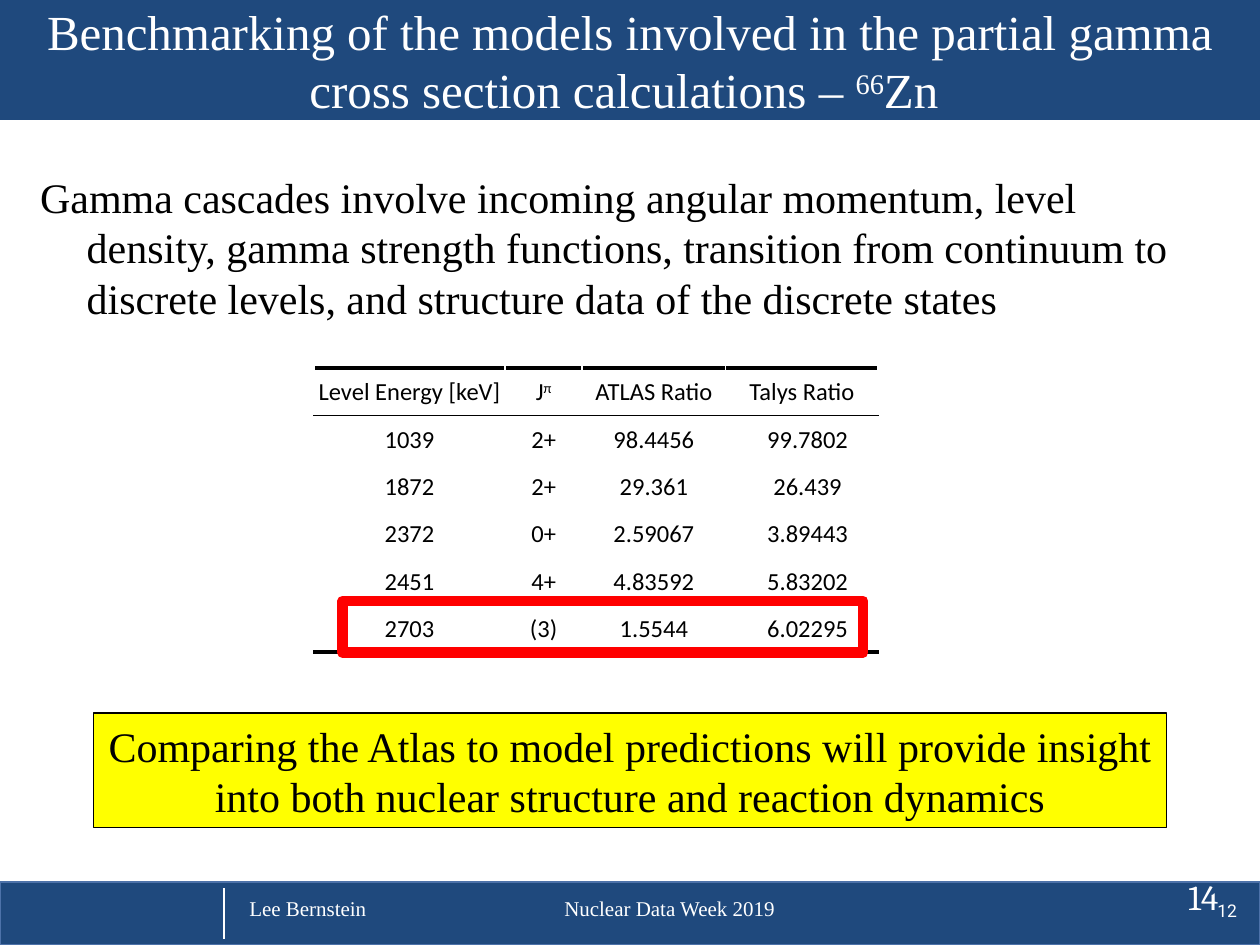
from typing import NamedTuple, Optional

from lxml import etree
from pptx import Presentation
from pptx.dml.color import RGBColor
from pptx.enum.shapes import MSO_CONNECTOR, MSO_SHAPE
from pptx.enum.text import MSO_ANCHOR, PP_ALIGN
from pptx.oxml.ns import qn
from pptx.util import Inches, Pt

RECT = MSO_SHAPE.RECTANGLE
STRAIGHT = MSO_CONNECTOR.STRAIGHT
LEFT, CENTER = PP_ALIGN.LEFT, PP_ALIGN.CENTER
TOP, MIDDLE = MSO_ANCHOR.TOP, MSO_ANCHOR.MIDDLE

WHITE = RGBColor(0xFF, 0xFF, 0xFF)
BLACK = RGBColor(0, 0, 0)
NAVY = RGBColor(0x1F, 0x49, 0x7D)
STEEL = RGBColor(0x4D, 0x72, 0xA9)
YELLOW = RGBColor(0xFF, 0xFF, 0)
RED = RGBColor(0xFF, 0, 0)
SERIF = "Times New Roman"


class Box(NamedTuple):
    left: float
    top: float
    width: float
    height: float


class Style(NamedTuple):
    font: str
    size: float
    color: RGBColor
    align: PP_ALIGN = CENTER


class Run(NamedTuple):
    text: str
    raised: bool = False


class Border(NamedTuple):
    color: RGBColor
    width: float


THIN_WHITE = Border(WHITE, 1)
THIN_BLACK = Border(BLACK, 1)
THICK_BLACK = Border(BLACK, 2.25)

COLUMN_WIDTHS = (1.52, 0.61, 1.14, 1.21)
ROW_HEIGHT = 0.376
HEADER = ([Run("Level Energy [keV]")], [Run("J"), Run("π", True)],
          [Run("ATLAS Ratio")], [Run("Talys Ratio")])
LEVELS = (
    ("1039", "2+", "98.4456", "99.7802"),
    ("1872", "2+", "29.361", "26.439"),
    ("2372", "0+", "2.59067", "3.89443"),
    ("2451", "4+", "4.83592", "5.83202"),
    ("2703", "(3)", "1.5544", "6.02295"),
)


def write(tf, runs: list[Run], style: Style):
    p = tf.paragraphs[0]
    p.alignment = style.align
    for run in runs:
        r = p.add_run()
        r.text = run.text
        r.font.name = style.font
        r.font.size = Pt(style.size)
        r.font.color.rgb = style.color
        if run.raised:
            r.font._element.set("baseline", "30000")
    return p


def add_text(slide, box: Box, runs: list[Run], style: Style):
    tf = slide.shapes.add_textbox(*map(Inches, box)).text_frame
    tf.word_wrap = True
    tf.vertical_anchor = TOP
    return write(tf, runs, style)


def add_rect(slide, box: Box, fill: Optional[RGBColor], line: Border):
    sp = slide.shapes.add_shape(RECT, *map(Inches, box))
    sp.shadow.inherit = False
    if fill is None:
        sp.fill.background()
    else:
        sp.fill.solid()
        sp.fill.fore_color.rgb = fill
    sp.line.color.rgb = line.color
    sp.line.width = Pt(line.width)
    sp.text_frame.word_wrap = True
    sp.text_frame.vertical_anchor = MIDDLE
    return sp


def set_borders(cell, left: Border, right: Border, top: Border, bottom: Border) -> None:
    tc_pr = cell._tc.get_or_add_tcPr()
    sides = zip(("a:lnL", "a:lnR", "a:lnT", "a:lnB"), (left, right, top, bottom))
    for i, (tag, border) in enumerate(sides):
        ln = etree.Element(qn(tag), w=str(Pt(border.width)))
        fill = etree.SubElement(ln, qn("a:solidFill"))
        etree.SubElement(fill, qn("a:srgbClr"), val=str(border.color))
        tc_pr.insert(i, ln)


def add_level_table(slide, left: float, top: float) -> None:
    rows = [HEADER] + [[[Run(value)] for value in level] for level in LEVELS]
    last = len(rows) - 1
    style = Style("Calibri", 14, BLACK)
    table = slide.shapes.add_table(
        len(rows), len(COLUMN_WIDTHS), Inches(left), Inches(top),
        Inches(sum(COLUMN_WIDTHS)), Inches(ROW_HEIGHT * len(rows))).table
    table.first_row = table.horz_banding = False
    for column, width in zip(table.columns, COLUMN_WIDTHS):
        column.width = Inches(width)
    for i, row in enumerate(rows):
        table.rows[i].height = Inches(ROW_HEIGHT)
        above = {0: THICK_BLACK, 1: THIN_BLACK}.get(i, THIN_WHITE)
        below = {0: THIN_BLACK, last: THICK_BLACK}.get(i, THIN_WHITE)
        for j, runs in enumerate(row):
            cell = table.cell(i, j)
            cell.fill.background()
            cell.vertical_anchor = MIDDLE
            indented = i > 0 and j == len(row) - 1
            cell.margin_left = Inches(0.1 if indented else 0.01)
            cell.margin_right = cell.margin_top = Inches(0.01)
            cell.margin_bottom = 0
            write(cell.text_frame, runs, style)
            set_borders(cell, THIN_WHITE, THIN_WHITE, above, below)


def add_footer(slide) -> None:
    add_rect(slide, Box(0, 7, 10, 0.5), NAVY, Border(STEEL, 0.75))
    add_text(slide, Box(9.54, 7.09, 0.4, 0.27), [Run("12")], Style("Roboto", 10, WHITE))
    divider = slide.shapes.add_connector(
        STRAIGHT, Inches(1.78), Inches(7.05), Inches(1.78), Inches(7.45))
    divider.line.color.rgb = WHITE
    divider.line.width = Pt(1)
    etree.SubElement(divider._element.spPr, qn("a:effectLst"))
    p = add_text(slide, Box(1.88, 7.06, 4.42, 0.3),
                 [Run("Lee Bernstein\tNuclear Data Week 2019")],
                 Style(SERIF, 12, WHITE, LEFT))
    tabs = etree.SubElement(p._p.get_or_add_pPr(), qn("a:tabLst"))
    etree.SubElement(tabs, qn("a:tab"), pos=str(Inches(2.5)), algn="l")


def main() -> None:
    prs = Presentation()
    prs.slide_width, prs.slide_height = Inches(10), Inches(7.5)
    slide = prs.slides.add_slide(prs.slide_layouts[6])

    add_footer(slide)

    title = add_rect(slide, Box(0, 0, 10, 0.95), NAVY, Border(NAVY, 0.75))
    write(title.text_frame,
          [Run("Benchmarking of the models involved in the partial gamma "
               "cross section calculations – "), Run("66", True), Run("Zn ")],
          Style(SERIF, 28, WHITE))

    p = add_text(slide, Box(0.22, 1.31, 9.53, 2.26),
                 [Run("Gamma cascades involve incoming angular momentum, level density, "
                      "gamma strength functions, transition from continuum to discrete "
                      "levels, and structure data of the discrete states")],
                 Style(SERIF, 24, BLACK, LEFT))
    p_pr = p._p.get_or_add_pPr()
    p_pr.set("marL", str(Inches(0.37)))
    p_pr.set("indent", str(Inches(-0.37)))

    add_text(slide, Box(9.24, 6.9, 0.62, 0.48), [Run("14")], Style("Cambria", 20, WHITE))
    add_level_table(slide, 2.49, 2.92)

    conclusion = add_rect(slide, Box(0.74, 5.66, 8.52, 0.91), YELLOW, Border(BLACK, 0.75))
    write(conclusion.text_frame,
          [Run("Comparing the Atlas to model predictions will provide insight "
               "into both nuclear structure and reaction dynamics")],
          Style(SERIF, 24, BLACK))

    highlight = add_rect(slide, Box(2.72, 4.77, 4.13, 0.41), None, Border(RED, 6.25))
    etree.SubElement(highlight.line._get_or_add_ln(), qn("a:round"))

    prs.save("out.pptx")


if __name__ == "__main__":
    main()
